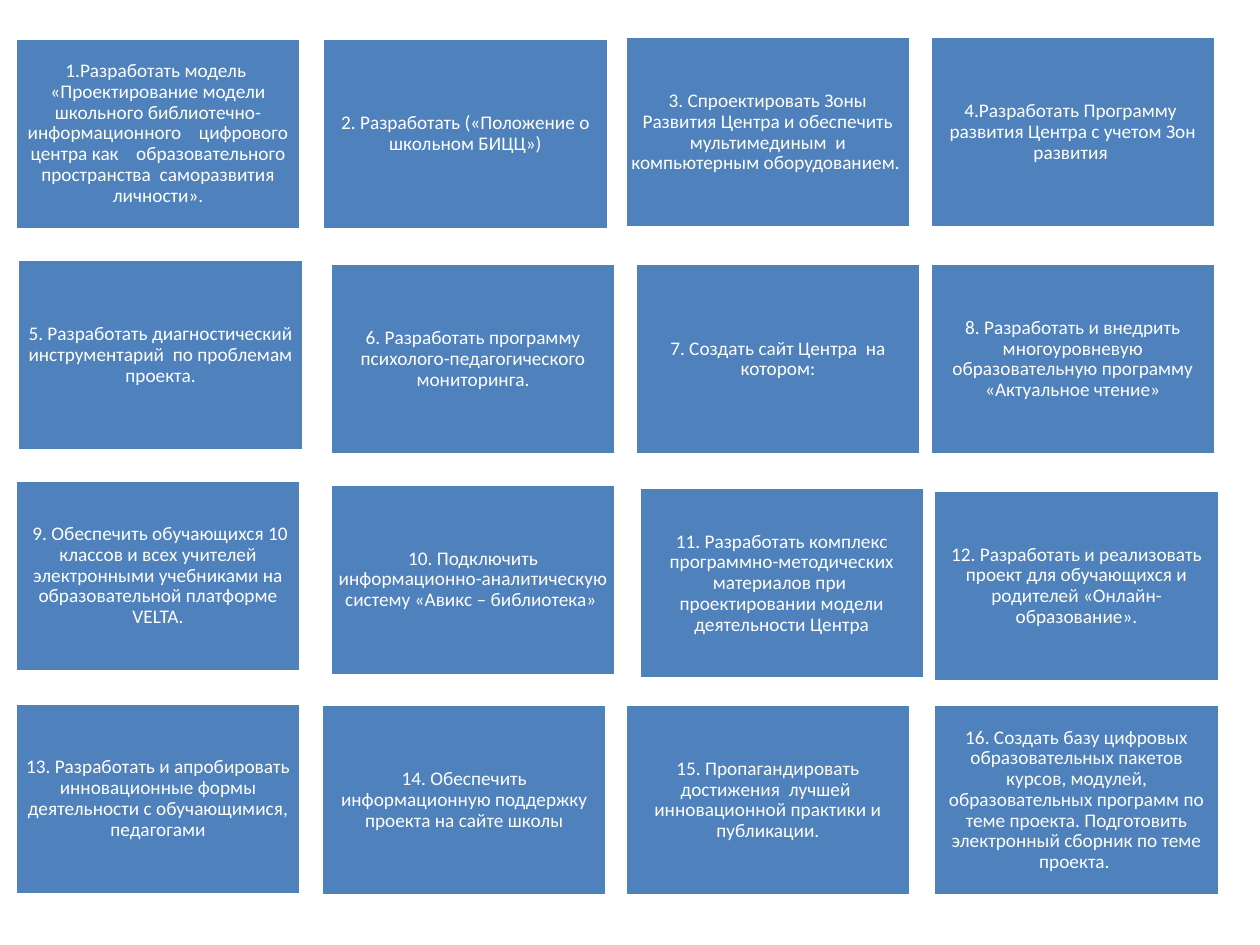
from pptx import Presentation
from pptx.dml.color import RGBColor
from pptx.enum import shapes, text
from pptx import util as u

BLUE = RGBColor(0x4F, 0x81, 0xBD)
WHITE = RGBColor(0xFF, 0xFF, 0xFF)

COLUMNS = 4
TASKS = [
    ("1.Разработать модель  «Проектирование модели школьного библиотечно-информационного    цифрового центра как    образовательного пространства  саморазвития личности».", 0, 0),
    ("2. Разработать («Положение о школьном БИЦЦ»)", 0.02, 0),
    ("3. Спроектировать Зоны Развития Центра и обеспечить мультимединым  и компьютерным оборудованием. ", 0, -0.01),
    ("4.Разработать Программу  развития Центра с учетом Зон развития ", 0, -0.01),
    ("5. Разработать диагностический инструментарий  по проблемам проекта.", 0.02, 0),
    ("6. Разработать программу психолого-педагогического мониторинга.", 0.08, 0.03),
    ("7. Создать сайт Центра  на котором:", 0.08, 0.03),
    ("8. Разработать и внедрить многоуровневую образовательную программу «Актуальное чтение»", 0, 0.03),
    (" 9. Обеспечить обучающихся 10 классов и всех учителей электронными учебниками на образовательной платформе VELTA.", 0, -0.01),
    ("10. Подключить информационно-аналитическую систему «Авикс – библиотека» ", 0.08, 0.02),
    ("11. Разработать комплекс программно-методических материалов при  проектировании модели деятельности Центра", 0.11, 0.05),
    ("12. Разработать и реализовать проект для обучающихся и родителей «Онлайн-образование».", 0.03, 0.07),
    ("13. Разработать и апробировать инновационные формы деятельности с обучающимися, педагогами", 0, 0),
    ("14. Обеспечить информационную поддержку проекта на сайте школы", 0.01, 0.01),
    ("15. Пропагандировать достижения  лучшей  инновационной практики и публикации.", 0, 0.01),
    ("16. Создать базу цифровых образовательных пакетов курсов, модулей, образовательных программ по теме проекта. Подготовить электронный сборник по теме проекта. ", 0.03, 0.01),
]


class TaskBoard:
    """Holds the card style, the grid and the current page."""

    left, top = 0.12, 0.3
    column_pitch, row_pitch = 2.42, 1.76
    width, height = 2.27, 1.52
    inset = u.Inches(0.05)
    font_name, font_size = "Calibri", u.Pt(11)

    def __init__(self, page):
        self.group = page.shapes.add_group_shape()

    def card(self, column, row, wording, shift_x=0, shift_y=0):
        box = self.group.shapes.add_shape(
            shapes.MSO_SHAPE.RECTANGLE,
            u.Inches(self.left + column * self.column_pitch + shift_x),
            u.Inches(self.top + row * self.row_pitch + shift_y),
            u.Inches(self.width),
            u.Inches(self.height),
        )
        box.shadow.inherit = False
        box.fill.solid()
        box.fill.fore_color.rgb = BLUE
        box.line.color.rgb = WHITE
        box.line.width = u.Pt(2)
        self.label(box.text_frame, wording)

    def label(self, frame, wording):
        frame.text = wording
        frame.word_wrap = True
        frame.vertical_anchor = text.MSO_ANCHOR.MIDDLE
        frame.margin_left = frame.margin_right = self.inset
        frame.margin_top = frame.margin_bottom = self.inset
        para = frame.paragraphs[0]
        para.alignment = text.PP_ALIGN.CENTER
        para.line_spacing = 0.9
        para.space_after = u.Pt(3.85)
        span = para.runs[0]
        span.font.name = self.font_name
        span.font.size = self.font_size
        span.font.color.rgb = WHITE


def main():
    deck = Presentation()
    deck.slide_width, deck.slide_height = u.Inches(10), u.Inches(7.5)
    board = TaskBoard(deck.slides.add_slide(deck.slide_layouts[6]))
    for index, (wording, shift_x, shift_y) in enumerate(TASKS):
        row, column = divmod(index, COLUMNS)
        board.card(column, row, wording, shift_x, shift_y)
    deck.save("out.pptx")


if __name__ == "__main__":
    main()
